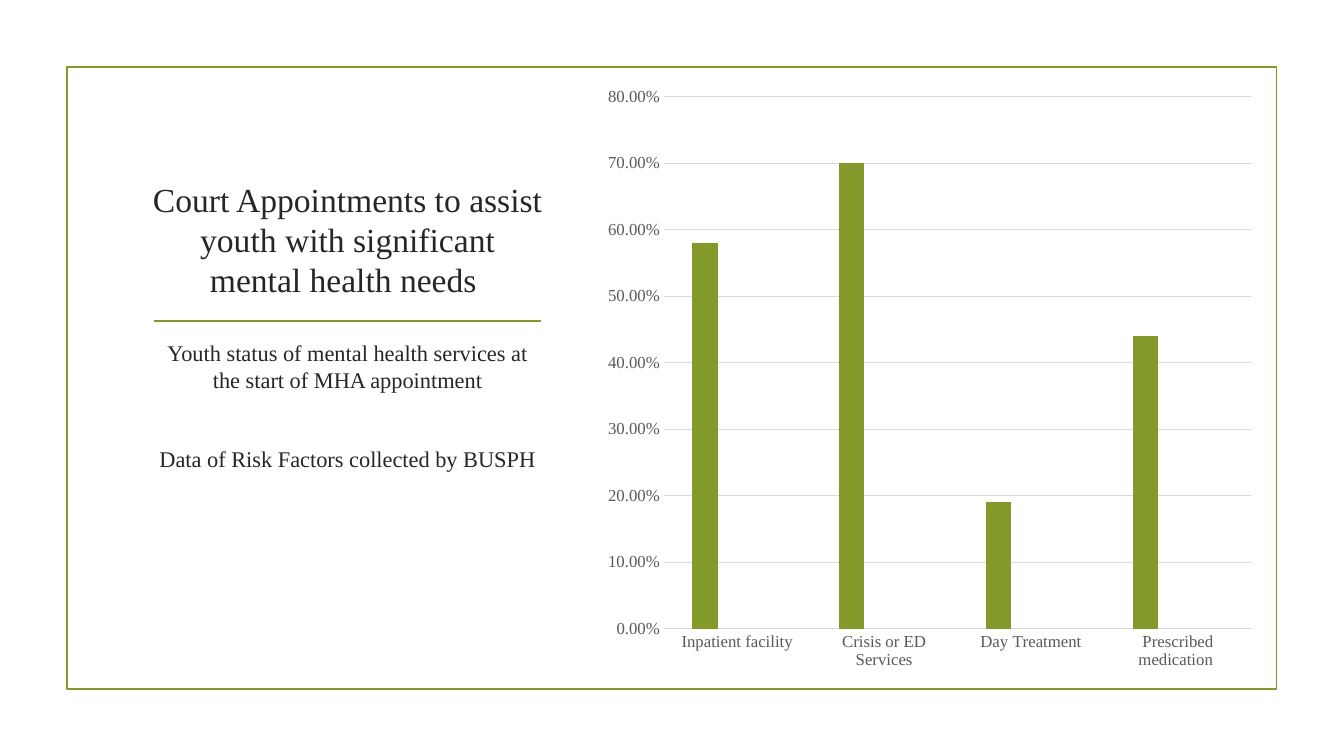
from dataclasses import dataclass

from lxml.etree import SubElement
from pptx import Presentation
from pptx.chart.data import CategoryChartData
from pptx.dml.color import RGBColor as RGB
from pptx.enum.chart import XL_CHART_TYPE as CT, XL_TICK_MARK as TM
from pptx.enum.shapes import MSO_CONNECTOR as MC, MSO_SHAPE as MS
from pptx.enum.text import MSO_ANCHOR as MA, MSO_AUTO_SIZE as AS, PP_ALIGN as AL
from pptx.oxml.ns import qn
from pptx.util import Pt


@dataclass(frozen=True)
class Theme:
    font: str = "Times New Roman"
    accent: str = "83992A"
    series: tuple = ("83992A", "3C9770", "44709D")
    ink: str = "262626"
    axis_ink: str = "595959"
    grid: str = "D9D9D9"
    title_size: float = 24
    body_size: float = 16
    axis_size: float = 12
    rule_width: float = 1.25
    grid_width: float = 0.75


def set_font(font, *, name, size, color):
    font.name, font.size, font.bold = name, Pt(size), False
    font.color.rgb = RGB.from_string(color)


def set_line(line, color, width):
    line.color.rgb = RGB.from_string(color)
    line.width = Pt(width)


def add_text(tf, text, *, font, size, color, before=0, first=False):
    p = tf.paragraphs[0] if first else tf.add_paragraph()
    p.alignment, p.line_spacing = AL.CENTER, 1.0
    p.space_before, p.space_after = Pt(before), Pt(0)
    r = p.add_run()
    r.text = text
    set_font(r.font, name=font, size=size, color=color)


class SlideBuilder:
    def __init__(self, slide, theme):
        self.s, self.t = slide, theme

    def frame(self, x, y, w, h):
        sp = self.s.shapes.add_shape(MS.RECTANGLE, Pt(x), Pt(y), Pt(w), Pt(h))
        sp.shadow.inherit = False
        sp.fill.background()
        set_line(sp.line, self.t.accent, self.t.rule_width)

    def rule(self, x1, x2, y):
        cx = self.s.shapes.add_connector(MC.STRAIGHT, Pt(x1), Pt(y), Pt(x2), Pt(y))
        set_line(cx.line, self.t.accent, self.t.rule_width)
        SubElement(cx._element.spPr, qn("a:effectLst"))

    def fill_text(self, sp, box, texts, size, anchor, gap=0):
        sp.left, sp.top, sp.width, sp.height = map(Pt, box)
        tf = sp.text_frame
        tf.word_wrap, tf.auto_size, tf.vertical_anchor = True, AS.NONE, anchor
        for i, text in enumerate(texts):
            add_text(tf, text, font=self.t.font, size=size, color=self.t.ink,
                     before=gap if i else 0, first=i == 0)

    def title(self, box, text):
        self.fill_text(self.s.shapes.title, box, [text], self.t.title_size, MA.BOTTOM)

    def body(self, box, texts, gap):
        sp = self.s.shapes.add_textbox(*map(Pt, box))
        self.fill_text(sp, box, texts, self.t.body_size, MA.TOP, gap)

    def column_chart(self, box, categories, series):
        t = self.t
        data = CategoryChartData(number_format="0.00%")
        data.categories = categories
        for name, values in series:
            data.add_series(name, values)
        chart = self.s.shapes.add_chart(CT.COLUMN_CLUSTERED, *map(Pt, box), data).chart
        chart.has_legend = chart.has_title = False
        set_font(chart.font, name=t.font, size=t.axis_size, color=t.axis_ink)

        plot = chart.plots[0]
        plot.gap_width, plot.overlap, plot.vary_by_categories = 219, -27, False
        for ser, color in zip(plot.series, t.series):
            ser.format.fill.solid()
            ser.format.fill.fore_color.rgb = RGB.from_string(color)

        cat, val = chart.category_axis, chart.value_axis
        for axis in (cat, val):
            axis.major_tick_mark = axis.minor_tick_mark = TM.NONE
            set_font(axis.tick_labels.font, name=t.font, size=t.axis_size, color=t.axis_ink)
        set_line(cat.format.line, t.grid, t.grid_width)
        val.format.line.fill.background()
        val.minimum_scale, val.maximum_scale, val.major_unit = 0, 0.8, 0.1
        val.tick_labels.number_format = "0.00%"
        val.tick_labels.number_format_is_linked = False
        val.has_major_gridlines = True
        set_line(val.major_gridlines.format.line, t.grid, t.grid_width)


def main():
    prs = Presentation()
    prs.slide_width, prs.slide_height = Pt(960), Pt(540)
    b = SlideBuilder(prs.slides.add_slide(prs.slide_layouts[5]), Theme())

    b.frame(47.8, 48, 864, 444)
    b.rule(110, 386.5, 229.5)
    b.title((101.75, 109.5, 293, 108),
            "Court Appointments to assist youth with significant mental health needs ")
    b.column_chart(
        (424.8, 54, 478.6, 432),
        ["Inpatient facility", "Crisis or ED Services", "Day Treatment", "Prescribed medication "],
        [("Series 1", [0.58, 0.7, 0.19, 0.44]),
         ("Series 2", [None] * 4),
         ("Series 3", [None] * 4)])
    b.body((101.75, 239, 293, 192),
           ["Youth status of mental health services at the start of MHA appointment",
            "Data of Risk Factors collected by BUSPH"], gap=37)

    prs.save("out.pptx")


if __name__ == "__main__":
    main()
